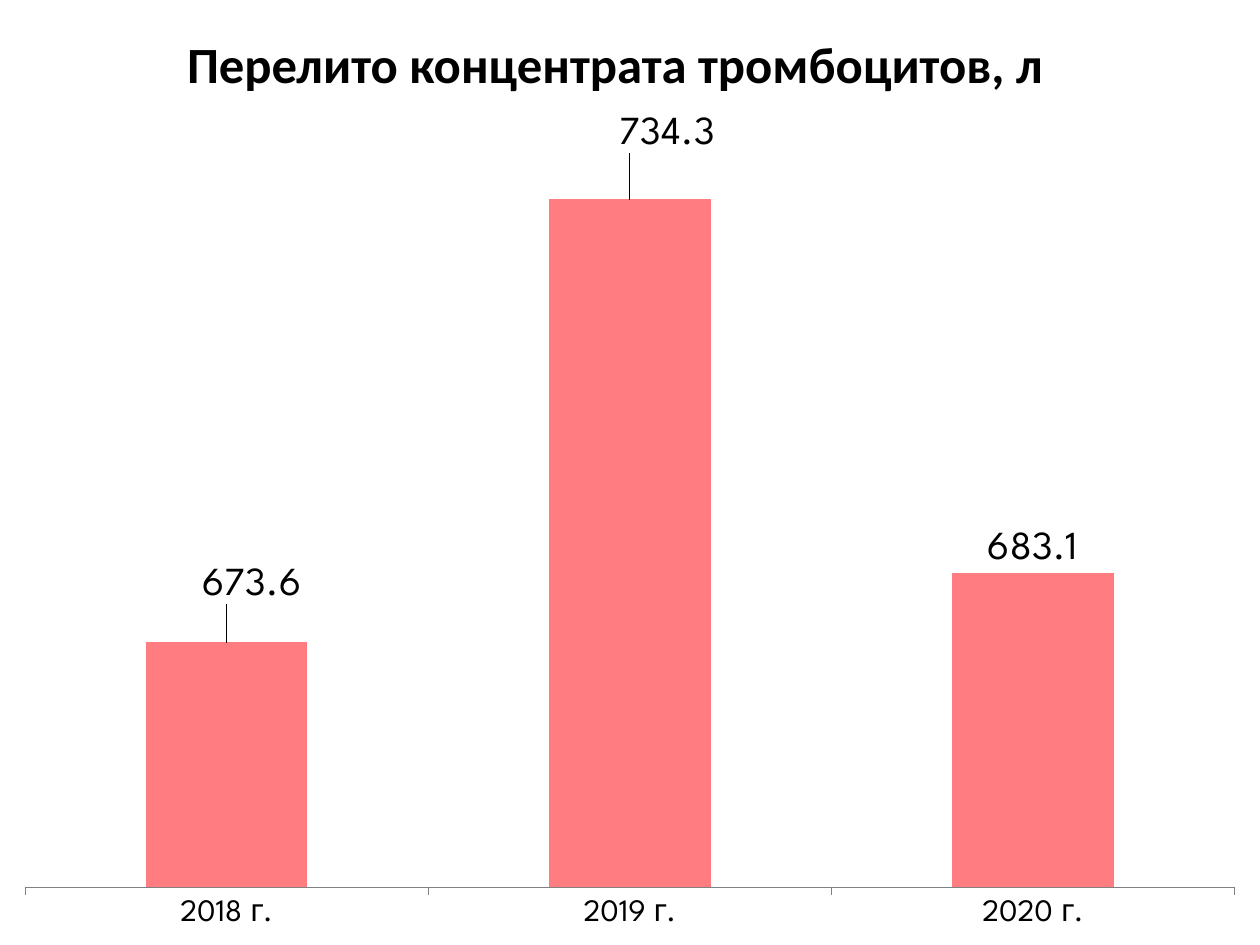
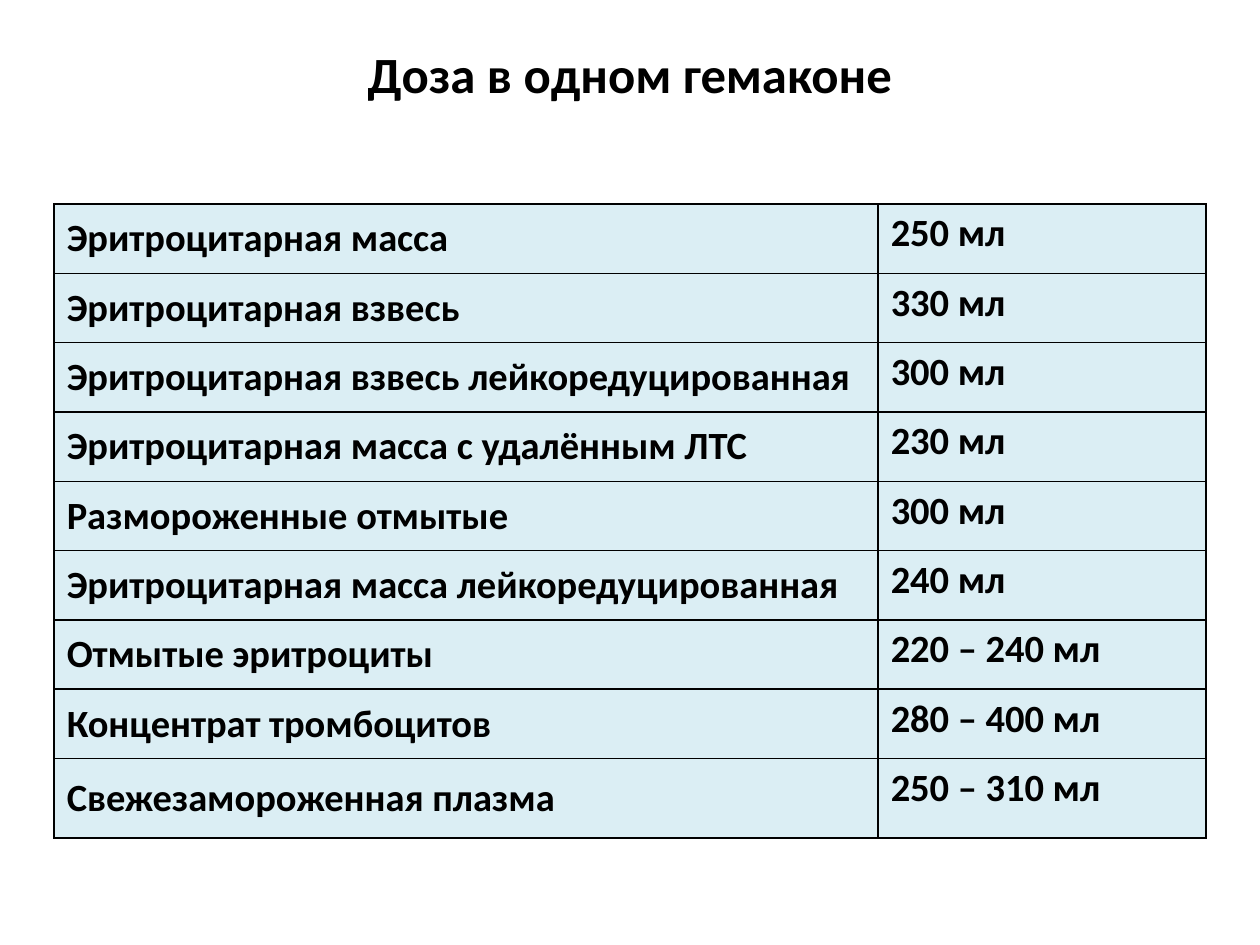
import pptx
import pptx.chart.data
import pptx.dml.color
import pptx.enum.chart
import pptx.enum.text
import pptx.oxml
import pptx.oxml.ns
import pptx.util
from dataclasses import dataclass
from lxml import etree

Inches = pptx.util.Inches
Pt = pptx.util.Pt
qn = pptx.oxml.ns.qn


@dataclass(frozen=True)
class Theme:
    text: str = "000000"
    bar: str = "FF7C80"
    cell: str = "DBEEF4"
    axis: str = "808080"
    font: str = "Calibri"
    chart_font: str = "League Spartan"
    title_size: int = 29
    table_size: int = 22
    axis_size: int = 18
    label_size: int = 23


class Deck:
    """Builds slides in one shared theme."""

    def __init__(self, theme):
        self.theme = theme
        self.prs = pptx.Presentation()
        self.prs.slide_width = Inches(10)
        self.prs.slide_height = Inches(7.5)
        self.s = None

    def rgb(self, color):
        return pptx.dml.color.RGBColor.from_string(color)

    def style_font(self, font, size, name, bold=False):
        font.size = Pt(size)
        font.name = name
        font.bold = bold
        font.color.rgb = self.rgb(self.theme.text)

    def add_slide(self):
        self.s = self.prs.slides.add_slide(self.prs.slide_layouts[6])

    def title(self, text, left, top, width):
        sp = self.s.shapes.add_textbox(Inches(left), Inches(top), Inches(width), Inches(0.59))
        tf = sp.text_frame
        tf.word_wrap = True
        tf.auto_size = pptx.enum.text.MSO_AUTO_SIZE.SHAPE_TO_FIT_TEXT
        tf.text = text
        p = tf.paragraphs[0]
        p.alignment = pptx.enum.text.PP_ALIGN.CENTER
        self.style_font(p.runs[0].font, self.theme.title_size, self.theme.font, True)

    def layout(self, **values):
        layout = etree.Element(qn("c:layout"))
        manual = etree.SubElement(layout, qn("c:manualLayout"))
        for key, value in values.items():
            etree.SubElement(manual, qn(f"c:{key}")).set("val", str(value))
        return layout

    def column_chart(self, categories, values, label_shifts):
        t = self.theme
        data = pptx.chart.data.CategoryChartData()
        data.categories = categories
        data.add_series("Series 1", values)
        chart = self.s.shapes.add_chart(
            pptx.enum.chart.XL_CHART_TYPE.COLUMN_CLUSTERED,
            Inches(0), Inches(0.92), Inches(10), Inches(6.58), data).chart
        chart.has_title = False
        chart.has_legend = False
        self.style_font(chart.font, t.axis_size, t.font)

        value_axis = chart.value_axis
        value_axis.visible = False
        value_axis.has_major_gridlines = False
        value_axis.minimum_scale = 640
        value_axis.maximum_scale = 740
        category_axis = chart.category_axis
        category_axis.major_tick_mark = pptx.enum.chart.XL_TICK_MARK.OUTSIDE
        category_axis.format.line.color.rgb = self.rgb(t.axis)
        self.style_font(category_axis.tick_labels.font, t.axis_size, t.chart_font)

        plot = chart.plots[0]
        plot.gap_width = 150
        plot.vary_by_categories = False
        series = plot.series[0]
        series.format.fill.solid()
        series.format.fill.fore_color.rgb = self.rgb(t.bar)
        for i in range(len(values)):
            label = series.points[i].data_label
            self.style_font(label.font, t.label_size, t.chart_font)
            label.position = pptx.enum.chart.XL_LABEL_POSITION.OUTSIDE_END
        for idx, (x, y) in zip(series._element.iter(qn("c:idx")), label_shifts):
            idx.addnext(self.layout(x=x, y=y))

        plot_area = chart._chartSpace.chart.plotArea
        for old in plot_area.findall(qn("c:layout")):
            plot_area.remove(old)
        plot_area.insert(0, self.layout(
            layoutTarget="inner", xMode="edge", yMode="edge", x=0.02, y=0.04, w=0.96, h=0.89))

    def border(self, cell):
        tc_pr = cell._tc.get_or_add_tcPr()
        for i, side in enumerate("LRTB"):
            line = etree.Element(qn(f"a:ln{side}"), w=str(Pt(1)))
            fill = etree.SubElement(line, qn("a:solidFill"))
            etree.SubElement(fill, qn("a:srgbClr"), val=self.theme.text)
            tc_pr.insert(i, line)

    def table(self, rows, left, top, widths, heights):
        table = self.s.shapes.add_table(
            len(rows), len(widths), Inches(left), Inches(top),
            Inches(sum(widths)), Inches(sum(heights))).table
        table.first_row = False
        table.horz_banding = False
        for column, width in zip(table.columns, widths):
            column.width = Inches(width)
        anchors = (pptx.enum.text.MSO_ANCHOR.MIDDLE, pptx.enum.text.MSO_ANCHOR.TOP)
        for row, height, texts in zip(table.rows, heights, rows):
            row.height = Inches(height)
            for cell, text, anchor in zip(row.cells, texts, anchors):
                cell.text_frame.text = text
                cell.vertical_anchor = anchor
                cell.fill.solid()
                cell.fill.fore_color.rgb = self.rgb(self.theme.cell)
                r = cell.text_frame.paragraphs[0].runs[0]
                self.style_font(r.font, self.theme.table_size, self.theme.font, True)
                self.border(cell)


DOSES = [
    ("Эритроцитарная масса", "250 мл"),
    ("Эритроцитарная взвесь", "330 мл"),
    ("Эритроцитарная взвесь лейкоредуцированная", "300 мл"),
    ("Эритроцитарная масса с удалённым ЛТС", "230 мл"),
    ("Размороженные отмытые", "300 мл"),
    ("Эритроцитарная масса лейкоредуцированная", "240 мл"),
    ("Отмытые эритроциты", "220 – 240 мл"),
    ("Концентрат тромбоцитов", "280 – 400 мл"),
    ("Свежезамороженная плазма", "250 – 310 мл"),
]


def main():
    deck = Deck(Theme())

    deck.add_slide()
    deck.title("Перелито концентрата тромбоцитов, л", 0.28, 0.21, 9.21)
    deck.column_chart(
        ["2018 г.", "2019 г.", "2020 г."], [673.6, 734.3, 683.1],
        [(0.02, -0.06), (0.02, -0.04), (0.03, -0.05)])

    deck.add_slide()
    deck.title("Доза в одном гемаконе", 0.51, 0.29, 8.98)
    deck.table(DOSES, 0.43, 1.62, [6.54, 2.6], [0.55] * (len(DOSES) - 1) + [0.63])

    deck.prs.save("out.pptx")


if __name__ == "__main__":
    main()
